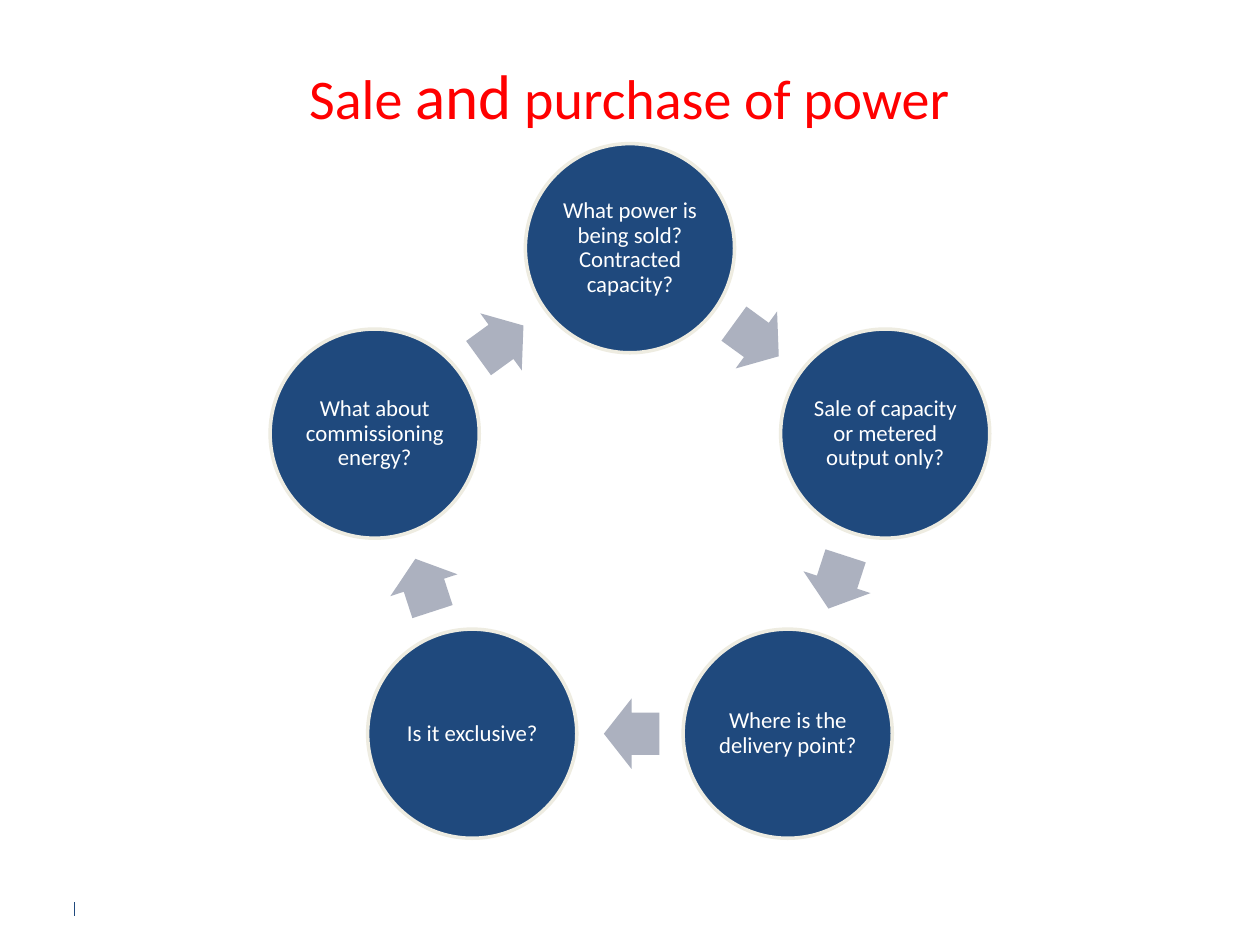
from math import cos, radians, sin

from lxml.etree import SubElement
from pptx import Presentation
from pptx.dml.color import RGBColor
from pptx.enum.shapes import MSO_CONNECTOR as Connector, MSO_SHAPE as Shape
from pptx.enum.text import MSO_ANCHOR as Anchor, PP_ALIGN as Align
from pptx.oxml.ns import qn
from pptx.util import Inches, Pt

WIDTH, HEIGHT = 10, 7.5
COLORS = {"title": "FF0000", "navy": "1F497D", "rim": "EEECE1",
          "arrow": "ACB1BF", "white": "FFFFFF"}
QUESTIONS = [
    "What power is being sold? Contracted capacity?",
    "Sale of capacity or metered output only?",
    "Where is the delivery point?",
    "Is it exclusive?",
    "What about commissioning energy?",
]
CENTER_X, CENTER_Y, RADIUS = 5, 4.1, 2.13
CIRCLE = 1.66
ARROW_WIDTH, ARROW_HEIGHT = 0.44, 0.56
ARROW_SHARE = 0.495  # position of an arrow between two circle centres


def color(name):
    return RGBColor.from_string(COLORS[name])


def write(frame, spans, tint, spacing=1.0, inset=0.1):
    """Fill a frame with one centred paragraph of (text, size) spans."""
    frame.word_wrap = True
    frame.vertical_anchor = Anchor.MIDDLE
    frame.margin_left = frame.margin_right = Inches(inset)
    frame.margin_top = frame.margin_bottom = Inches(min(inset, 0.05))
    para = frame.paragraphs[0]
    para.alignment = Align.CENTER
    para.line_spacing = spacing
    for text, size in spans:
        span = para.add_run()
        span.text = text
        span.font.name = "Calibri"
        span.font.size = Pt(size)
        span.font.color.rgb = color(tint)


def ring_point(index, count):
    """Centre of a circle, clockwise from the top of the ring."""
    angle = radians(360 * index / count)
    return CENTER_X + RADIUS * sin(angle), CENTER_Y - RADIUS * cos(angle)


class CycleSlide:
    def __init__(self, deck):
        self.page = deck.slides.add_slide(deck.slide_layouts[5])

    def title(self, spans):
        box = self.page.shapes.title
        box.left, box.top = Inches(0.39), Inches(0.47)
        box.width, box.height = Inches(9.21), Inches(0.55)
        write(box.text_frame, spans, "title")

    def shape(self, kind, center, width, height, fill):
        x, y = center
        shape = self.page.shapes.add_shape(
            kind, Inches(x - width / 2), Inches(y - height / 2),
            Inches(width), Inches(height))
        shape.shadow.inherit = False
        shape.fill.solid()
        shape.fill.fore_color.rgb = color(fill)
        shape.line.fill.background()
        return shape

    def circle(self, center, text):
        circle = self.shape(Shape.OVAL, center, CIRCLE, CIRCLE, "navy")
        circle.line.color.rgb = color("rim")
        circle.line.width = Pt(2)
        write(circle.text_frame, [(text, 13)], "white", spacing=0.9, inset=0.02)

    def arrow(self, start, end, rotation):
        center = [a + (b - a) * ARROW_SHARE for a, b in zip(start, end)]
        arrow = self.shape(Shape.RIGHT_ARROW, center,
                           ARROW_WIDTH, ARROW_HEIGHT, "arrow")
        arrow.adjustments[0], arrow.adjustments[1] = 0.6, 0.5
        arrow.rotation = rotation

    def footer_tick(self):
        tick = self.page.shapes.add_connector(
            Connector.STRAIGHT, Inches(0.59), Inches(7.16),
            Inches(0.59), Inches(7.27))
        tick.line.color.rgb = color("navy")
        tick.line.width = Pt(0.5)
        SubElement(tick._element.spPr, qn("a:effectLst"))


def main():
    deck = Presentation()
    deck.slide_width, deck.slide_height = Inches(WIDTH), Inches(HEIGHT)
    slide = CycleSlide(deck)
    slide.footer_tick()
    slide.title([("Sale ", 32), ("and", 36), (" purchase of power", 32)])
    count = len(QUESTIONS)
    for index, question in enumerate(QUESTIONS):
        center = ring_point(index, count)
        slide.circle(center, question)
        slide.arrow(center, ring_point(index + 1, count),
                    (index + 0.5) * 360 / count)
    deck.save("out.pptx")


if __name__ == "__main__":
    main()
